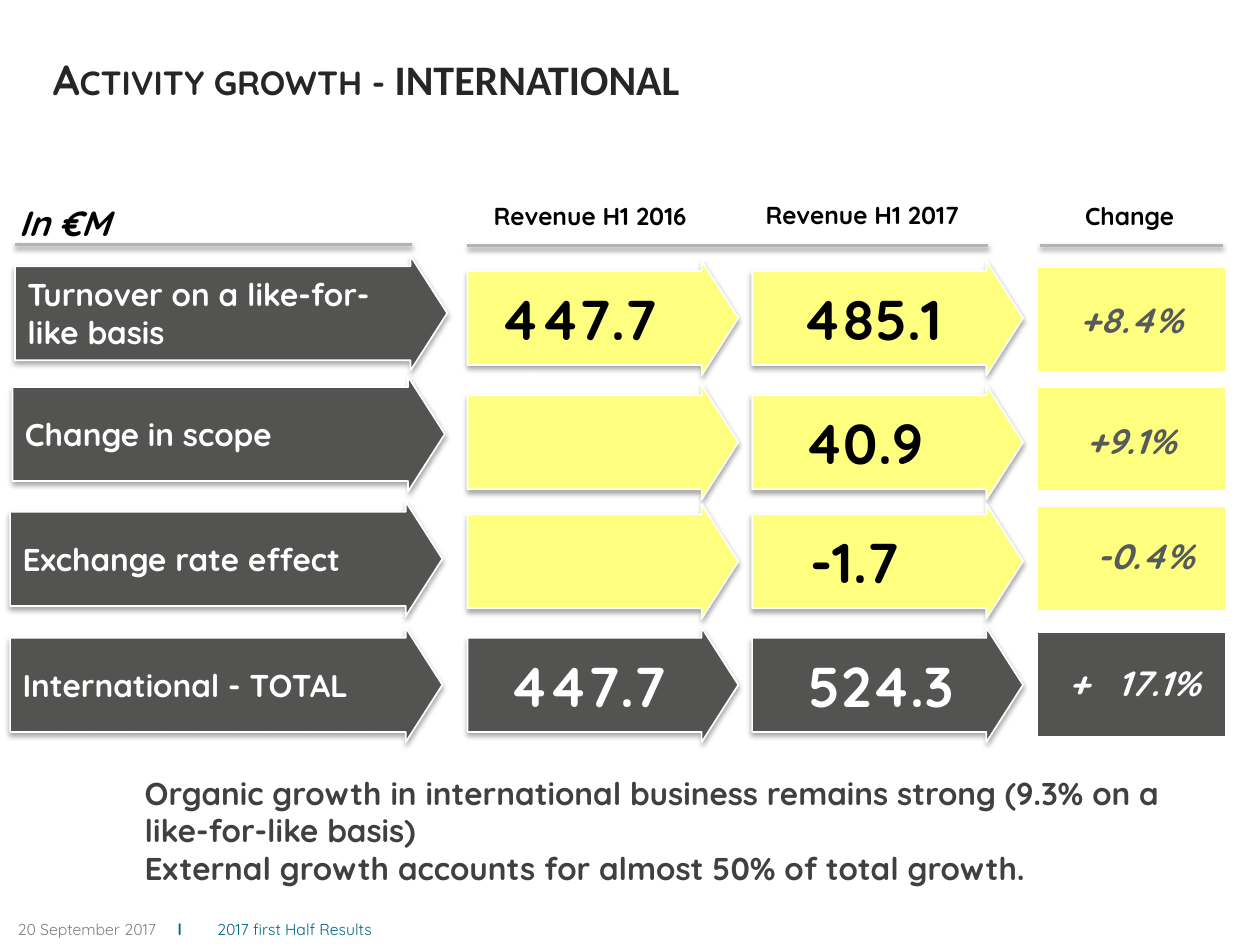
from lxml.etree import SubElement
from pptx import Presentation
from pptx.dml.color import RGBColor
from pptx.enum.shapes import MSO_CONNECTOR as CONN, MSO_SHAPE as SHAPE
from pptx.enum.text import MSO_ANCHOR as ANCHOR, MSO_AUTO_SIZE as AUTO, PP_ALIGN as ALIGN
from pptx.oxml.ns import qn
from pptx.util import Pt

# Content
COLORS = {
    "dark": "535452", "yellow": "FEFF7F", "white": "FFFFFF", "black": "000000",
    "title": "262626", "body": "404040", "percent": "575A5B", "rule": "B1B3B4",
    "footer": "808080", "teal": "006983",
}
TITLE = ["Activity growth - ", "INTERNATIONAL"]
HEADERS = [("Revenue H1 2016", 263.5, 111.6), ("Revenue H1 2017", 419, 110.9),
           ("Change", 571.7, 111.6)]  # text, left, top
RULES = [(8.6, 235.4, 139.7), (267.1, 564.5, 140.4), (594, 699.1, 140.4)]  # from, to, y
# Values are (text, sideways shift from the centre)
ROWS = [
    dict(label="Turnover on a like-for-like basis", values=[("447.7", -5), ("485.1", 0)],
         change=("+8.4%", 0), left=8.6, tops=(146.2, 149, 152.6, 167)),
    dict(label="Change in scope", values=[("", 0), ("40.9", -5)],
         change=("+9.1%", 0), left=7.2, tops=(215.3, 220, 221, 236.2)),
    dict(label="Exchange rate effect", values=[("", 0), ("-1.7", -10)],
         change=("-0.4%", 8), left=5.8, tops=(286.6, 288, 289.4, 301.7)),
    dict(label="International - TOTAL", values=[("447.7", 0), ("524.3", 5)],
         change=("+\t17.1%", 0), left=5.8, tops=(358.6, 358.6, 361.4, 374.4), total=True),
]  # tops: label arrow, value arrows, change box, change text
COMMENTS = ["Organic growth in international business remains strong "
            "(9.3% on a like-for-like basis)",
            "External growth accounts for almost 50% of total growth."]
FOOTER = ["20 September 2017", "\tl", "\t2017 first Half Results"]

# Layout
ARROW_H, LABEL_W, VALUE_W = 65.5, 247, 154.8
VALUE_LEFTS = (267.1, 429.8)
CHANGE_LEFT, CHANGE_W, CHANGE_H = 592.6, 108, 59.8
CHANGE_TEXT_LEFT, HEADER_W = 572.6, 147.6
INSET = 7.2


def rgb(name):
    return RGBColor.from_string(COLORS[name])


def add_run(p, text, size=18, color="black", bold=True, italic=False,
            font="Quicksand", small_caps=False):
    r = p.add_run()
    r.text = text
    f = r.font
    f.name, f.size, f.bold, f.italic = font, Pt(size), bold, italic
    f.color.rgb = rgb(color)
    if small_caps:
        r._r.get_or_add_rPr().set("cap", "small")


def add_tabs(p, *stops):
    tabs = SubElement(p._p.get_or_add_pPr(), qn("a:tabLst"))
    for stop in stops:
        SubElement(tabs, qn("a:tab"), pos=str(Pt(stop)), algn="l")


def set_margins(tf, left=0, top=0, right=0, bottom=0):
    tf.margin_left, tf.margin_top = Pt(left), Pt(top)
    tf.margin_right, tf.margin_bottom = Pt(right), Pt(bottom)


def shift_text(tf, shift):
    """Move centred text sideways by widening one inset."""
    tf.margin_left = Pt(INSET + 2 * max(shift, 0))
    tf.margin_right = Pt(INSET + 2 * max(-shift, 0))


def add_text(slide, lines, left, top, width, height, align=ALIGN.LEFT, **fmt):
    tf = slide.shapes.add_textbox(Pt(left), Pt(top), Pt(width), Pt(height)).text_frame
    tf.word_wrap = True
    for i, line in enumerate(lines):
        p = tf.add_paragraph() if i else tf.paragraphs[0]
        p.alignment = align
        if line:
            add_run(p, line, **fmt)
    return tf


def set_shadow(sp, alpha, dist):
    effects = SubElement(sp._element.spPr, qn("a:effectLst"))
    shadow = SubElement(effects, qn("a:outerShdw"), blurRad=str(Pt(3.1)), dist=str(Pt(dist)),
                        dir="5400000", rotWithShape="0")
    color = SubElement(shadow, qn("a:srgbClr"), val=COLORS["black"])
    SubElement(color, qn("a:alpha"), val=str(alpha * 1000))


def add_box(slide, kind, left, top, width, height, fill):
    sp = slide.shapes.add_shape(kind, Pt(left), Pt(top), Pt(width), Pt(height))
    sp.fill.solid()
    sp.fill.fore_color.rgb = rgb(fill)
    sp.line.color.rgb = rgb("white")
    sp.line.width = Pt(1)
    return sp


def add_arrow(slide, text, left, top, width, fill, align, shift=0, **fmt):
    sp = add_box(slide, SHAPE.RIGHT_ARROW, left, top, width, ARROW_H, fill)
    sp.adjustments[0], sp.adjustments[1] = 0.82, 0.32
    set_shadow(sp, 35, 1.8)
    if text:
        tf = sp.text_frame
        tf.word_wrap = True
        shift_text(tf, shift)
        tf.paragraphs[0].alignment = align
        add_run(tf.paragraphs[0], text, **fmt)


def add_row(slide, row):
    total = row.get("total", False)
    fill = "dark" if total else "yellow"
    label_top, value_top, box_top, text_top = row["tops"]
    add_arrow(slide, row["label"], row["left"], label_top, LABEL_W, "dark",
              ALIGN.LEFT, color="white")
    for (text, shift), left in zip(row["values"], VALUE_LEFTS):
        add_arrow(slide, text, left, value_top, VALUE_W, fill, ALIGN.CENTER, shift,
                  size=32, color="white" if total else "black")
    box = add_box(slide, SHAPE.RECTANGLE, CHANGE_LEFT, box_top, CHANGE_W, CHANGE_H, fill)
    box.shadow.inherit = False

    text, shift = row["change"]
    split = "\t" in text
    tf = add_text(slide, [""], CHANGE_TEXT_LEFT, text_top, HEADER_W, 31.7,
                  ALIGN.LEFT if split else ALIGN.CENTER)
    shift_text(tf, shift)
    p = tf.paragraphs[0]
    if split:
        tf.margin_left = Pt(38)
        add_tabs(p, 28)
    add_run(p, text, size=20, color="white" if total else "percent", italic=True)


def main():
    prs = Presentation()
    prs.slide_width, prs.slide_height = Pt(720), Pt(540)
    slide = prs.slides.add_slide(prs.slide_layouts[5])

    # Title
    title = slide.shapes.title
    title.left, title.top, title.width, title.height = Pt(30.2), Pt(9.4), Pt(596.2), Pt(71.3)
    tf = title.text_frame
    tf.auto_size, tf.vertical_anchor, tf.word_wrap = AUTO.NONE, ANCHOR.MIDDLE, True
    set_margins(tf)
    tf.paragraphs[0].alignment = ALIGN.LEFT
    for text, font in zip(TITLE, ("Quicksand", "Calibri")):
        add_run(tf.paragraphs[0], text, size=24, color="title", font=font, small_caps=True)

    # Column headers and rules
    add_text(slide, ["In €M"], 3.6, 111.6, 206.6, 31.7, size=20, italic=True)
    for text, left, top in HEADERS:
        add_text(slide, [text], left, top, HEADER_W, 24.5, ALIGN.CENTER, size=14)
    for start, end, y in RULES:
        rule = slide.shapes.add_connector(CONN.STRAIGHT, Pt(start), Pt(y), Pt(end), Pt(y))
        rule.line.color.rgb = rgb("rule")
        rule.line.width = Pt(2)
        set_shadow(rule, 38, 1.6)

    # Revenue rows
    for row in ROWS:
        add_row(slide, row)

    # Comments
    add_text(slide, COMMENTS, 75.6, 438.5, 599, 72.7, color="body")

    # Footer
    tf = add_text(slide, [""], 10.1, 520.6, 357.1, 20.9)
    tf.vertical_anchor = ANCHOR.MIDDLE
    set_margins(tf)
    p = tf.paragraphs[0]
    add_tabs(p, 91.5, 114)
    for text, color, bold in zip(FOOTER, ("footer", "teal", "teal"), (False, True, False)):
        add_run(p, text, size=9, color=color, bold=bold)

    prs.save("out.pptx")


if __name__ == "__main__":
    main()
